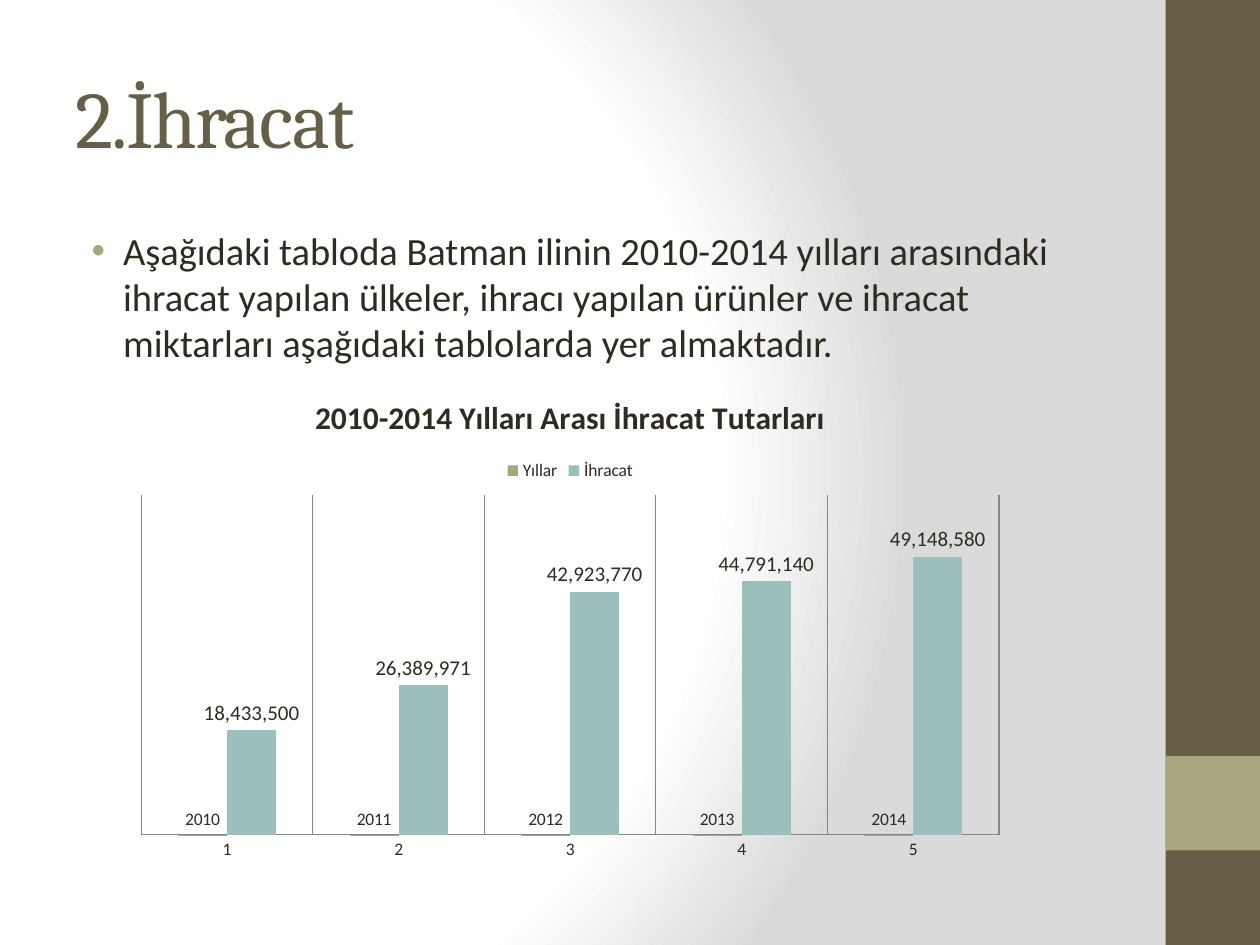
import pptx
import pptx.chart.data
import pptx.dml.color
import pptx.enum.chart
import pptx.enum.shapes
import pptx.enum.text
import pptx.oxml
import pptx.oxml.ns
import pptx.util

Inches, Pt = pptx.util.Inches, pptx.util.Pt

TITLE = "2.İhracat"
BODY = (
    "Aşağıdaki tabloda Batman ilinin 2010-2014 yılları arasındaki ihracat "
    "yapılan ülkeler, ihracı yapılan ürünler ve ihracat miktarları "
    "aşağıdaki tablolarda yer almaktadır."
)
CHART_TITLE = "2010-2014 Yılları Arası İhracat Tutarları"
CATEGORIES = ["1", "2", "3", "4", "5"]
# name, values, color key, label size key, label format
SERIES = [
    ("Yıllar", [2010, 2011, 2012, 2013, 2014], "olive", "chart", "General"),
    ("İhracat", [18433500, 26389971, 42923770, 44791140, 49148580],
     "teal", "label", "#,##0"),
]
# left, top, width, height, color key
SIDE_BARS = [(9.25, 0, 0.75, 7.5, "brown"), (9.25, 6, 0.75, 0.75, "olive")]

THEME = {
    "colors": {"brown": "675E47", "olive": "A9A57C", "teal": "9CBEBD",
               "text": "2F2B20", "line": "868686"},
    "background": [(0, "FFFFFF"), (75, "FFFFFF"), (100, "DADADA")],
    "sizes": {"title": 46, "body": 22, "chart_title": 18, "label": 12, "chart": 10},
    "heading_font": "Cambria",
    "body_font": "Calibri",
}


def color(key):
    return pptx.dml.color.RGBColor.from_string(THEME["colors"][key])


def style_font(font, size, color_key="text", name=THEME["body_font"]):
    font.name = name
    font.size = Pt(THEME["sizes"][size])
    font.color.rgb = color(color_key)


def append_xml(parent, *fragments):
    for fragment in fragments:
        tag, rest = fragment[1:].split(" ", 1)
        parent.append(pptx.oxml.parse_xml(
            f"<{tag} {pptx.oxml.ns.nsdecls('a')} {rest}"))


def paint_background(slide):
    """Fill the slide with a radial gradient."""
    slide.background.fill.gradient()
    gradient = slide.element.find(".//" + pptx.oxml.ns.qn("a:gradFill"))
    for child in list(gradient):
        gradient.remove(child)
    stops = "".join(
        f'<a:gs pos="{position * 1000}"><a:srgbClr val="{value}"/></a:gs>'
        for position, value in THEME["background"])
    append_xml(
        gradient,
        f"<a:gsLst >{stops}</a:gsLst>",
        '<a:path path="circle"><a:fillToRect l="20000" t="50000" '
        'r="100000" b="50000"/></a:path>')


def add_side_bars(slide):
    for left, top, width, height, color_key in SIDE_BARS:
        bar = slide.shapes.add_shape(
            pptx.enum.shapes.MSO_SHAPE.RECTANGLE,
            Inches(left), Inches(top), Inches(width), Inches(height))
        bar.shadow.inherit = False
        bar.fill.solid()
        bar.fill.fore_color.rgb = color(color_key)
        bar.line.fill.background()


def add_text(slide, text, top, height, anchor):
    box = slide.shapes.add_textbox(
        Inches(0.5), Inches(top), Inches(8.33), Inches(height))
    frame = box.text_frame
    frame.word_wrap = True
    frame.vertical_anchor = anchor
    frame.text = text
    return frame.paragraphs[0]


def add_title(slide):
    para = add_text(slide, TITLE, 0.3, 1.25, pptx.enum.text.MSO_ANCHOR.MIDDLE)
    span = para.runs[0]
    style_font(span.font, "title", "brown", THEME["heading_font"])
    span.font._element.set("spc", "-100")


def add_body(slide):
    para = add_text(slide, BODY, 1.75, 5.25, pptx.enum.text.MSO_ANCHOR.TOP)
    style_font(para.runs[0].font, "body")
    properties = para._p.get_or_add_pPr()
    properties.set("marL", str(Inches(0.38)))
    properties.set("indent", str(Inches(-0.25)))
    append_xml(
        properties,
        '<a:spcBef ><a:spcPct val="20000"/></a:spcBef>',
        f'<a:buClr ><a:srgbClr val="{THEME["colors"]["olive"]}"/></a:buClr>',
        '<a:buFont typeface="Arial"/>',
        '<a:buChar char="•"/>')


def style_axes(chart):
    axis = chart.category_axis
    axis.has_major_gridlines = True
    axis.major_tick_mark = pptx.enum.chart.XL_TICK_MARK.NONE
    axis.minor_tick_mark = pptx.enum.chart.XL_TICK_MARK.NONE
    style_font(axis.tick_labels.font, "chart")
    for line in (axis.format.line, axis.major_gridlines.format.line):
        line.color.rgb = color("line")
        line.width = Pt(0.75)
    chart.value_axis.has_major_gridlines = False
    chart.value_axis.visible = False
    chart.value_axis.minimum_scale = 0


def add_export_chart(slide):
    data = pptx.chart.data.CategoryChartData()
    data.categories = CATEGORIES
    for name, values, _, _, number_format in SERIES:
        data.add_series(name, values, number_format)
    chart = slide.shapes.add_chart(
        pptx.enum.chart.XL_CHART_TYPE.COLUMN_CLUSTERED,
        Inches(0.98), Inches(2.96), Inches(7.09), Inches(3.94), data).chart
    style_font(chart.font, "chart")

    chart.has_title = True
    chart.chart_title.include_in_layout = False
    chart.chart_title.text_frame.text = CHART_TITLE
    title_font = chart.chart_title.text_frame.paragraphs[0].runs[0].font
    style_font(title_font, "chart_title")
    title_font.bold = True

    chart.has_legend = True
    chart.legend.position = pptx.enum.chart.XL_LEGEND_POSITION.TOP
    chart.legend.include_in_layout = False
    style_font(chart.legend.font, "chart")
    style_axes(chart)

    plot = chart.plots[0]
    plot.gap_width = 150
    plot.overlap = 0
    plot.vary_by_categories = False
    for series, (_, _, color_key, size, number_format) in zip(plot.series, SERIES):
        series.format.fill.solid()
        series.format.fill.fore_color.rgb = color(color_key)
        labels = series.data_labels
        labels.show_value = True
        labels.number_format = number_format
        labels.number_format_is_linked = False
        labels.position = pptx.enum.chart.XL_LABEL_POSITION.OUTSIDE_END
        style_font(labels.font, size)


def main():
    deck = pptx.Presentation()
    deck.slide_width, deck.slide_height = Inches(10), Inches(7.5)
    page = deck.slides.add_slide(deck.slide_layouts[6])
    paint_background(page)
    add_side_bars(page)
    add_title(page)
    add_body(page)
    add_export_chart(page)
    deck.save("out.pptx")


if __name__ == "__main__":
    main()
